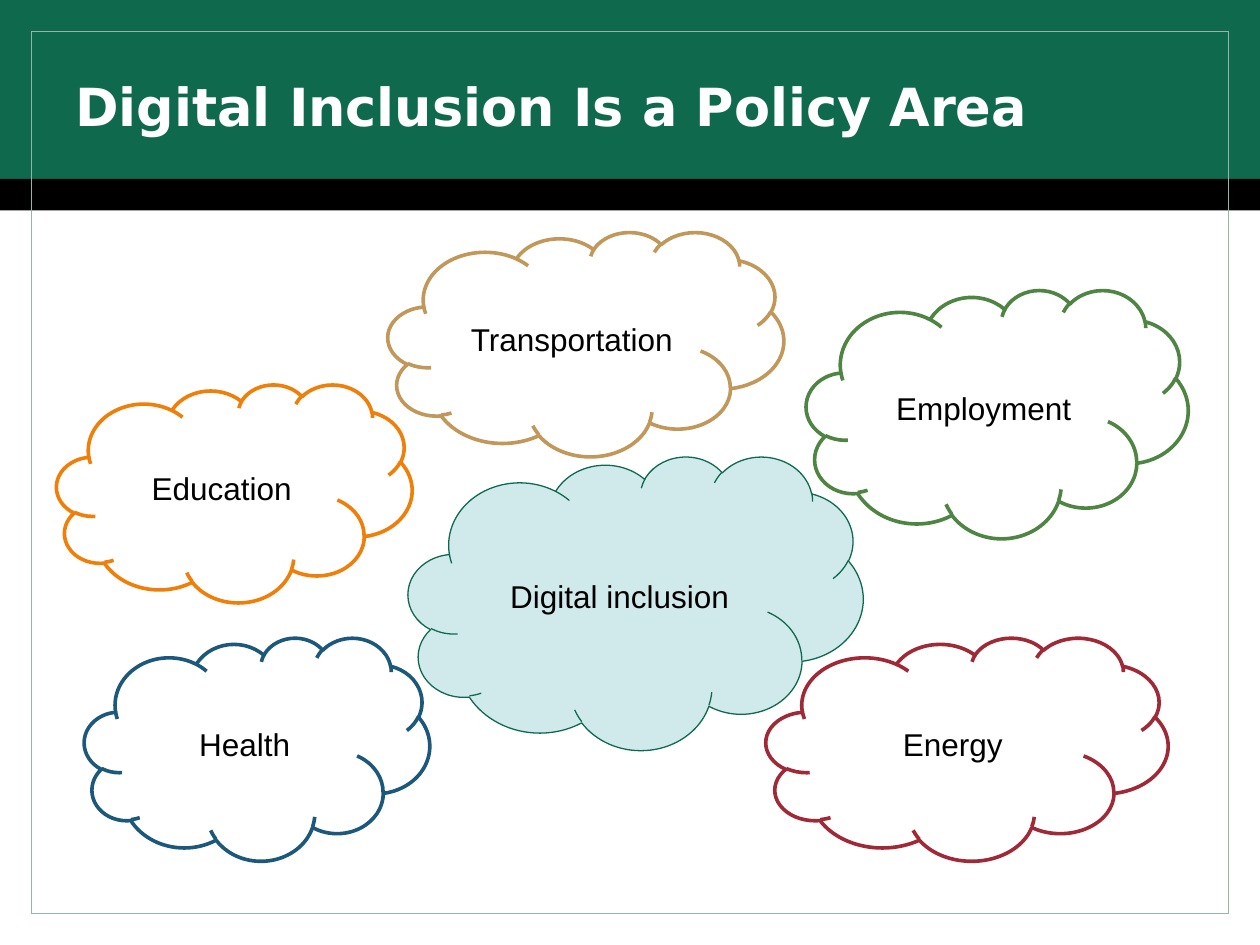
from typing import NamedTuple, Optional

from pptx import Presentation
from pptx.dml.color import RGBColor
from pptx.enum.shapes import MSO_SHAPE
from pptx.enum.text import MSO_ANCHOR, PP_ALIGN
from pptx.util import Inches, Pt

RECTANGLE, CLOUD = MSO_SHAPE.RECTANGLE, MSO_SHAPE.CLOUD
MIDDLE = MSO_ANCHOR.MIDDLE
LEFT, CENTER = PP_ALIGN.LEFT, PP_ALIGN.CENTER

COLORS = {
    "green": "0E694D",
    "black": "000000",
    "white": "FFFFFF",
    "frame": "96B5A8",
    "mist": "D0EAEC",
    "red": "9F2936",
    "orange": "F07F09",
    "blue": "1B587C",
    "leaf": "4E8542",
    "sand": "C19859",
}
TITLE_FORMAT = {"name": "DejaVu Sans", "size": Pt(30), "bold": True}
CLOUD_FORMAT = {"name": "Arial", "size": Pt(18), "bold": False}


class Box(NamedTuple):
    left: float
    top: float
    width: float
    height: float


class Panel(NamedTuple):
    box: Box
    fill: Optional[str] = None
    line: Optional[str] = None


class Cloud(NamedTuple):
    label: str
    box: Box
    line: str
    fill: str = "white"
    weight: float = 2.08


PANELS = [
    Panel(Box(0, 0, 10, 1.42), fill="green"),
    Panel(Box(0, 1.42, 10, 0.25), fill="black"),
    Panel(Box(0.25, 0.25, 9.5, 7), line="frame"),
]
CLOUDS = [
    Cloud("Energy", Box(6.08, 5.06, 3.19, 1.77), "red"),
    Cloud("Education", Box(0.45, 3.05, 2.82, 1.73), "orange"),
    Cloud("Health", Box(0.67, 5.06, 2.74, 1.77), "blue"),
    Cloud("Employment", Box(6.4, 2.3, 3.03, 1.97), "leaf"),
    Cloud("Transportation", Box(3.08, 1.84, 3.14, 1.78), "sand"),
    Cloud("Digital inclusion", Box(3.24, 3.62, 3.61, 2.33), "green", "mist", 0.75),
]


def color(name: str) -> RGBColor:
    """Return the named colour."""
    return RGBColor.from_string(COLORS[name])


def add_outline(slide, kind, box: Box, fill: Optional[str], line: Optional[str], weight: float):
    """Add a preset shape with an optional fill and line."""
    shape = slide.shapes.add_shape(kind, *map(Inches, box))
    shape.shadow.inherit = False
    if fill:
        shape.fill.solid()
        shape.fill.fore_color.rgb = color(fill)
    else:
        shape.fill.background()
    if line:
        shape.line.color.rgb = color(line)
        shape.line.width = Pt(weight)
    else:
        shape.line.fill.background()
    return shape


def write_text(shape, text: str, font_format: dict, text_color: str, alignment) -> None:
    """Write one vertically centred paragraph into a shape."""
    frame = shape.text_frame
    frame.word_wrap = True
    frame.vertical_anchor = MIDDLE
    paragraph = frame.paragraphs[0]
    paragraph.alignment = alignment
    run = paragraph.add_run()
    run.text = text
    for attribute, value in font_format.items():
        setattr(run.font, attribute, value)
    run.font.color.rgb = color(text_color)


def add_cloud(slide, cloud: Cloud) -> None:
    """Add a labelled cloud."""
    shape = add_outline(slide, CLOUD, cloud.box, cloud.fill, cloud.line, cloud.weight)
    write_text(shape, cloud.label, CLOUD_FORMAT, "black", CENTER)


def main() -> None:
    """Build and save the slide."""
    presentation = Presentation()
    presentation.slide_width = Inches(10)
    presentation.slide_height = Inches(7.5)
    slide = presentation.slides.add_slide(presentation.slide_layouts[6])
    for panel in PANELS:
        add_outline(slide, RECTANGLE, panel.box, panel.fill, panel.line, 0.75)
    title = slide.shapes.add_textbox(*map(Inches, Box(0.5, 0.25, 9, 1.17)))
    write_text(title, "Digital Inclusion Is a Policy Area", TITLE_FORMAT, "white", LEFT)
    for cloud in CLOUDS:
        add_cloud(slide, cloud)
    presentation.save("out.pptx")


if __name__ == "__main__":
    main()
